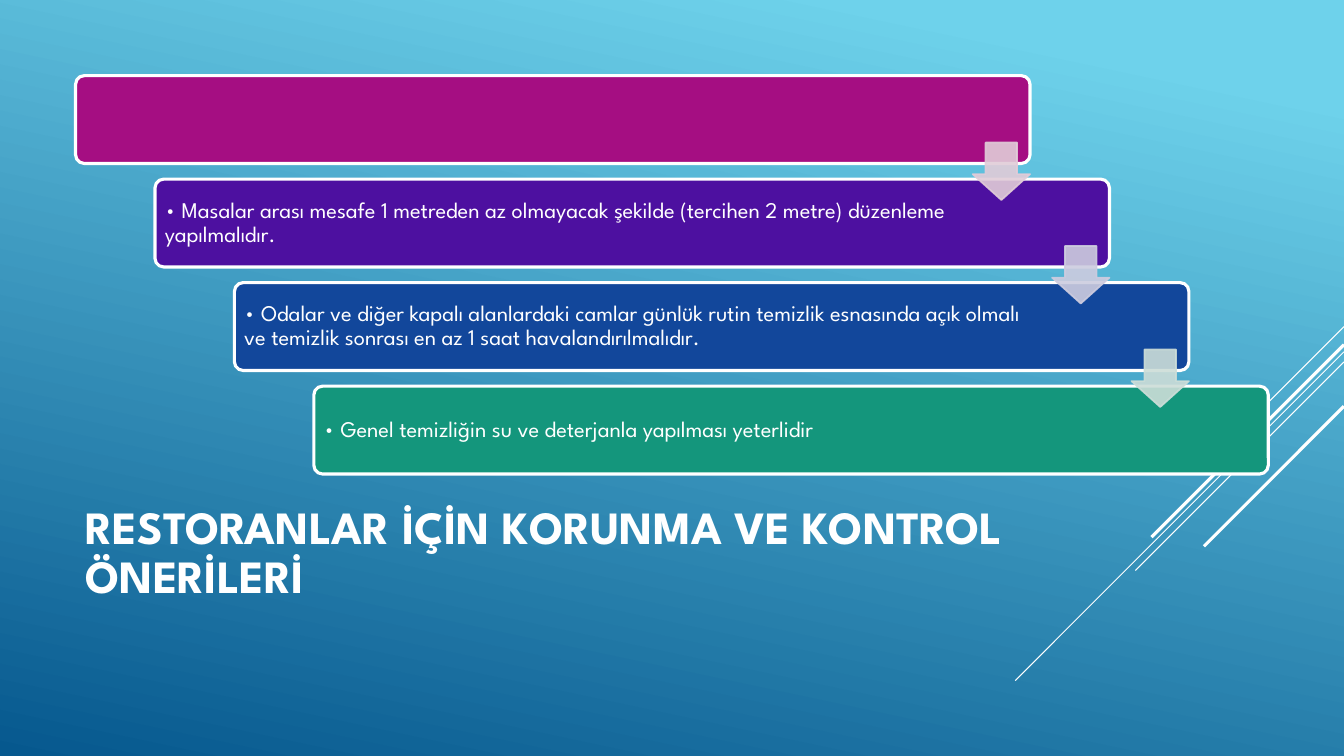
from lxml.etree import SubElement
from pptx import Presentation
from pptx.dml.color import RGBColor
from pptx.enum.shapes import MSO_CONNECTOR, MSO_SHAPE
from pptx.enum.text import MSO_ANCHOR
from pptx.oxml.ns import qn
from pptx.util import Pt

FONT = "League Spartan"
WHITE = "FFFFFF"
SLIDE_WIDTH, SLIDE_HEIGHT = 960, 540
CARD_WIDTH, CARD_HEIGHT = 681.8, 62.8
ARROW_SIZE = 41

RAYS = [(233.3, 72, 0.75), (251.3, 234.8, 0.75), (258.5, 149, 0.75),
        (246.2, 137.5, 2.25), (290.2, 100, 2.25)]
ADVICE = [
    ("A50E82", ""),
    ("4D10A0", "• Masalar arası mesafe 1 metreden az olmayacak şekilde "
               "(tercihen 2 metre) düzenleme yapılmalıdır."),
    ("12479B", "• Odalar ve diğer kapalı alanlardaki camlar günlük rutin temizlik "
               "esnasında açık olmalı ve temizlik sonrası en az 1 saat "
               "havalandırılmalıdır."),
    ("14967C", "• Genel temizliğin su ve deterjanla yapılması yeterlidir"),
]
ARROW_COLOURS = ["E1CCD8", "CDCCDF", "CCDDD8"]


def paint(colour_format, colour, alpha=100):
    """Set a solid colour, with opacity in percent."""
    colour_format.rgb = RGBColor.from_string(colour)
    if alpha < 100:
        for node in colour_format._xFill.iter(qn("a:srgbClr")):
            SubElement(node, qn("a:alpha")).set("val", str(alpha * 1000))


def add_background(slide):
    """Fill the slide with the blue gradient."""
    fill = slide.background.fill
    fill.gradient()
    fill.gradient_angle = 258
    for stop, (position, colour) in zip(fill.gradient_stops,
                                        [(0.1, "6ED2EB"), (1, "06588E")]):
        stop.position = position
        paint(stop.color, colour)


def add_rays(slide, right):
    """Draw the diagonal rays that fall from the right edge."""
    for top, run, weight in RAYS:
        ray = slide.shapes.add_connector(
            MSO_CONNECTOR.STRAIGHT, Pt(right), Pt(top), Pt(right - run), Pt(top + run))
        paint(ray.line.color, WHITE)
        ray.line.width = Pt(weight)
        SubElement(ray._element.spPr, qn("a:effectLst"))


def add_words(slide, words, box, size, insets, bold=False):
    """Place vertically centred white text in a box."""
    holder = slide.shapes.add_textbox(*map(Pt, box))
    frame = holder.text_frame
    frame.word_wrap = True
    frame.vertical_anchor = MSO_ANCHOR.MIDDLE
    (frame.margin_left, frame.margin_top,
     frame.margin_right, frame.margin_bottom) = map(Pt, insets)
    paragraph = frame.paragraphs[0]
    paragraph.line_spacing = 0.9
    run = paragraph.add_run()
    run.text = words
    run.font.name = FONT
    run.font.size = Pt(size)
    run.font.bold = bold
    paint(run.font.color, WHITE)


def add_block(slide, preset, box, adjustments, fill, line, weight, alpha=100):
    """Draw a filled and outlined preset shape."""
    block = slide.shapes.add_shape(preset, *map(Pt, box))
    block.shadow.inherit = False
    for index, value in enumerate(adjustments):
        block.adjustments[index] = value
    block.fill.solid()
    paint(block.fill.fore_color, fill, alpha)
    paint(block.line.color, line, alpha)
    block.line.width = Pt(weight)


def add_staircase(slide, left, top, width, height):
    """Step the advice cards down the box and link them with arrows."""
    step_x = (width - CARD_WIDTH) / (len(ADVICE) - 1)
    step_y = (height - CARD_HEIGHT) / (len(ADVICE) - 1)
    for index, (colour, words) in enumerate(ADVICE):
        x, y = left + index * step_x, top + index * step_y
        add_block(slide, MSO_SHAPE.ROUNDED_RECTANGLE,
                  (x, y, CARD_WIDTH, CARD_HEIGHT), [0.1], colour, WHITE, 2.25)
        if words:
            add_words(slide, words, (x + 2, y + 1.8, 580.5, CARD_HEIGHT - 3.6),
                      16, (5, 5, 5, 5))
    for index, colour in enumerate(ARROW_COLOURS):
        x = left + index * step_x + CARD_WIDTH - ARROW_SIZE
        y = top + index * step_y + (CARD_HEIGHT + step_y - ARROW_SIZE) / 2
        add_block(slide, MSO_SHAPE.DOWN_ARROW, (x, y, ARROW_SIZE, ARROW_SIZE),
                  [0.55, 0.45], colour, colour, 1.25, 90)


def main():
    """Build and save the slide."""
    deck = Presentation()
    deck.slide_width, deck.slide_height = Pt(SLIDE_WIDTH), Pt(SLIDE_HEIGHT)
    slide = deck.slides.add_slide(deck.slide_layouts[6])
    add_background(slide)
    add_rays(slide, SLIDE_WIDTH)
    add_words(slide, "RESTORANLAR İÇİN KORUNMA VE KONTROL ÖNERİLERİ",
              (54, 353.5, 672, 118.8), 33, (7.2, 3.6, 7.2, 38), True)
    add_staircase(slide, 54, 54, 852, 284.6)
    deck.save("out.pptx")


if __name__ == "__main__":
    main()
